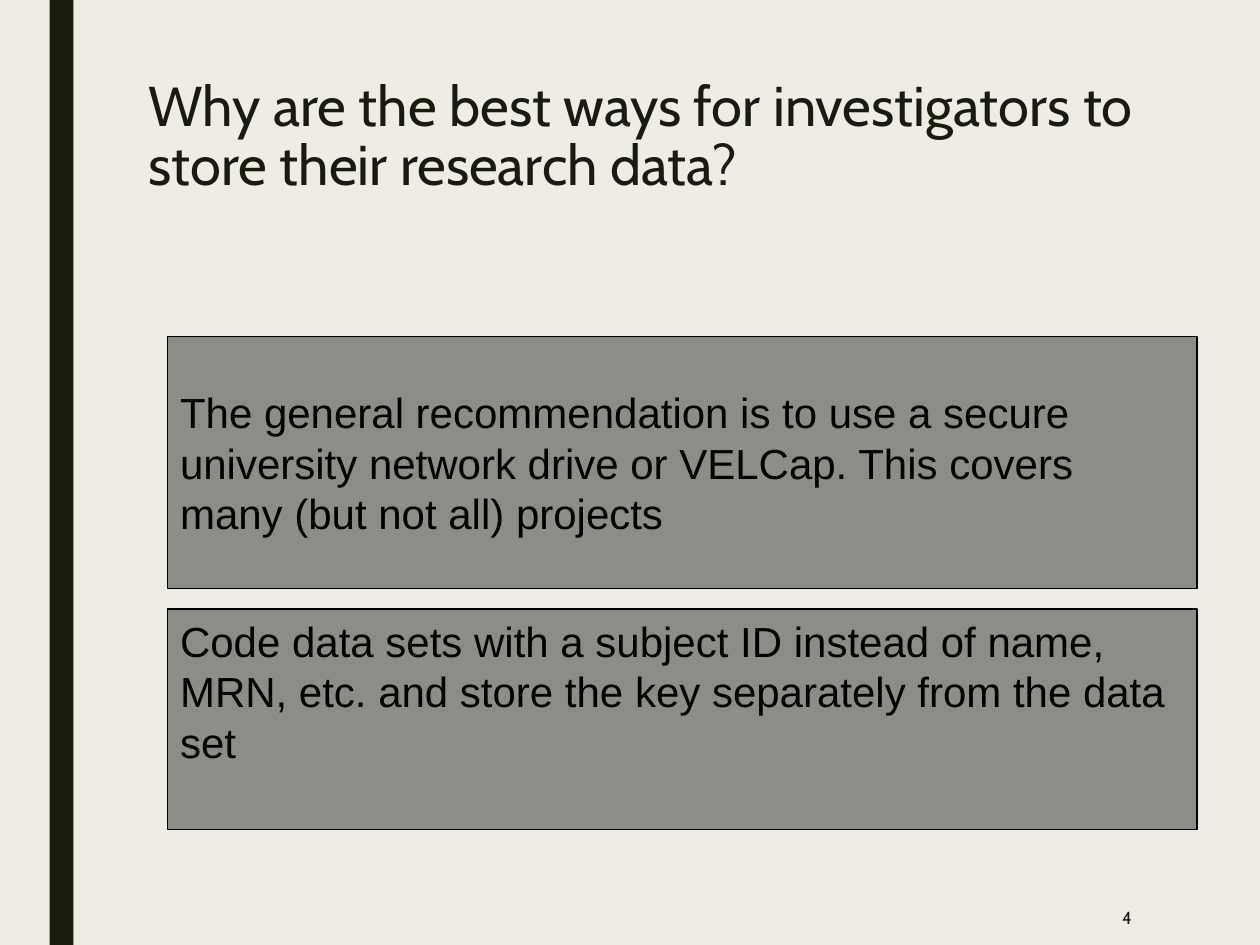
from pptx import Presentation
from pptx.dml.color import RGBColor
from pptx.enum.shapes import MSO_SHAPE as SHAPE
from pptx.enum.text import MSO_ANCHOR as ANCHOR, MSO_AUTO_SIZE as FIT, PP_ALIGN as ALIGN
from pptx.util import Cm, Pt

INK, PAPER, GREY, BLACK = "191B0E", "EFEDE3", "8C8D86", "000000"


def rgb(value):
    return RGBColor.from_string(value)


class Deck:
    """Holds the style and the current slide."""

    heading = {"name": "Cabin", "size": Pt(32), "bold": False}
    number = {"name": "Cabin", "size": Pt(10)}
    body = {"name": "Arial", "size": Pt(24)}

    def __init__(self, width, height):
        self.prs = Presentation()
        self.prs.slide_width, self.prs.slide_height = Cm(width), Cm(height)

    def add_slide(self):
        self.s = self.prs.slides.add_slide(self.prs.slide_layouts[5])
        fill = self.s.background.fill
        fill.solid()
        fill.fore_color.rgb = rgb(PAPER)

    def set_text(self, sp, text, style, color, anchor=ANCHOR.TOP, align=ALIGN.LEFT):
        tf = sp.text_frame
        frame = {"word_wrap": True, "auto_size": FIT.NONE, "vertical_anchor": anchor}
        for key, value in frame.items():
            setattr(tf, key, value)
        p = tf.paragraphs[0]
        p.alignment = align
        r = p.add_run()
        r.text = text
        for key, value in style.items():
            setattr(r.font, key, value)
        r.font.color.rgb = rgb(color)
        return tf

    def title(self, text, left, top, width, height):
        sp = self.s.shapes.title
        place = {"left": left, "top": top, "width": width, "height": height}
        for key, value in place.items():
            setattr(sp, key, Cm(value))
        tf = self.set_text(sp, text, self.heading, INK)
        tf.margin_right = Cm(0.6)
        tf.paragraphs[0].line_spacing = 0.89

    def rect(self, box, fill, line=None):
        sp = self.s.shapes.add_shape(SHAPE.RECTANGLE, *map(Cm, box))
        sp.shadow.inherit = False
        sp.fill.solid()
        sp.fill.fore_color.rgb = rgb(fill)
        if line:
            sp.line.color.rgb = rgb(line)
            sp.line.width = Pt(0.75)
        else:
            sp.line.fill.background()
        return sp

    def panel(self, text, box, anchor):
        self.set_text(self.rect(box, GREY, BLACK), text, self.body, BLACK, anchor)

    def page_number(self, text, box):
        sp = self.s.shapes.add_textbox(*map(Cm, box))
        self.set_text(sp, text, self.number, INK, ANCHOR.MIDDLE, ALIGN.RIGHT)


def main():
    deck = Deck(25.4, 19.05)
    deck.add_slide()

    # Side bar and title
    deck.rect((1, 0, 0.48, 19.05), INK)
    deck.title("Why are the best ways for investigators to store their research data?",
               2.74, 1.45, 22.86, 3.18)

    # Stacked recommendation panels
    panels = [
        ("The general recommendation is to use a secure university network drive "
         "or VELCap. This covers many (but not all) projects", 5.08, ANCHOR.MIDDLE),
        ("Code data sets with a subject ID instead of name, MRN, etc. and store "
         "the key separately from the data set", 4.45, ANCHOR.TOP),
    ]
    top, gap = 6.78, 0.42
    for text, height, anchor in panels:
        deck.panel(text, (3.38, top, 20.75, height), anchor)
        top += height + gap

    # Page number
    deck.page_number("4", (19.74, 17.93, 3.33, 1.12))

    deck.prs.save("out.pptx")


if __name__ == "__main__":
    main()
